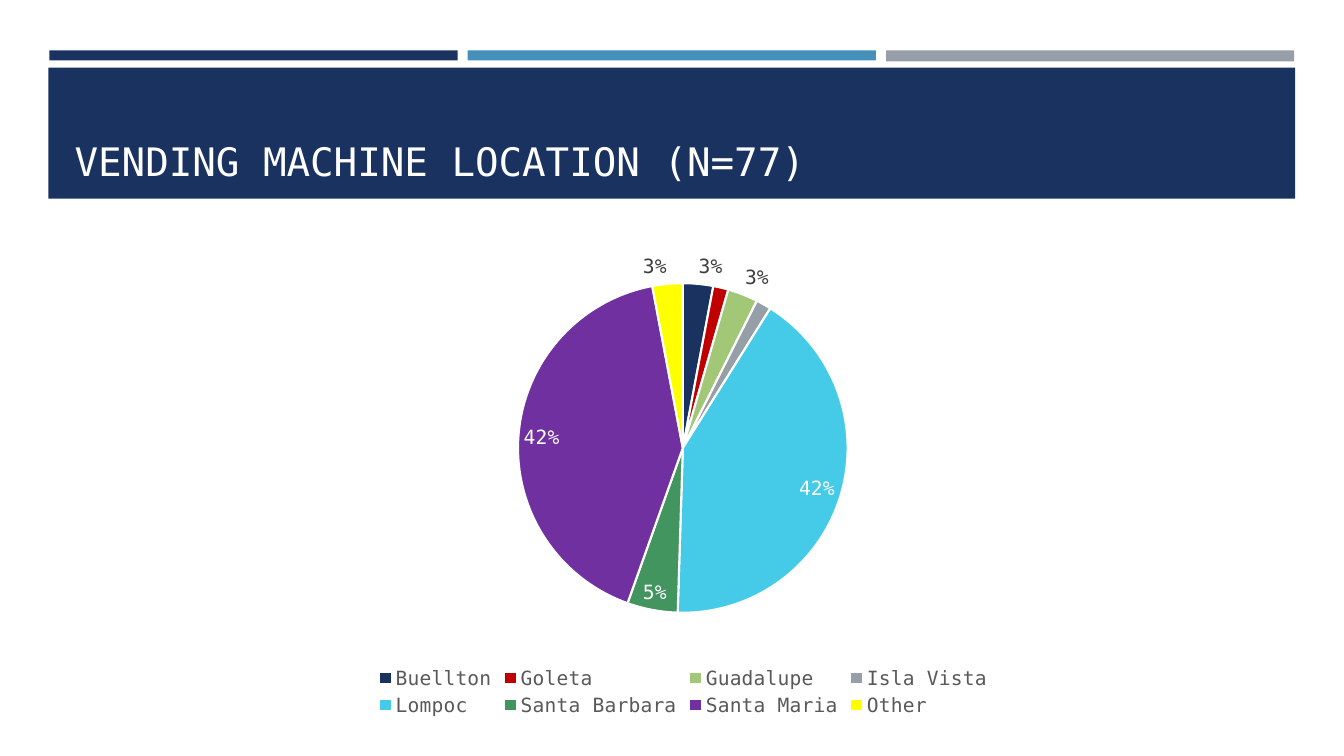
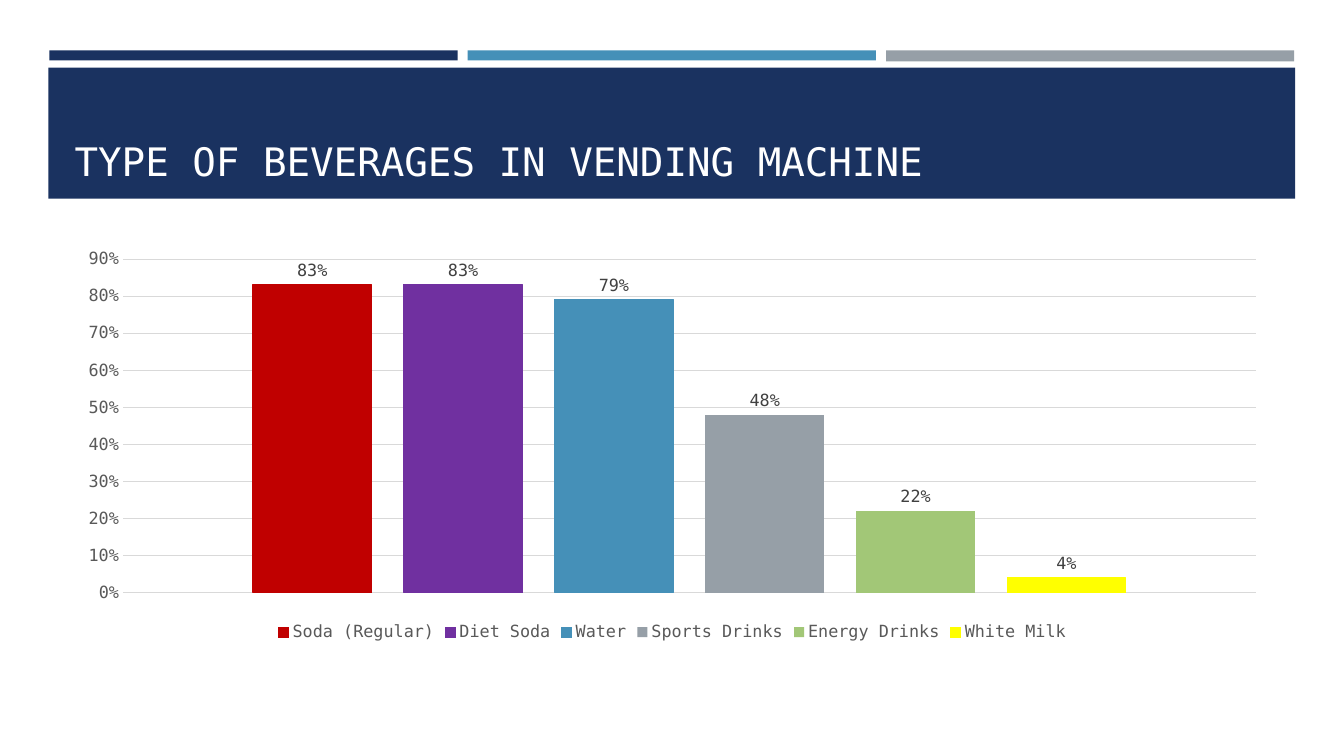
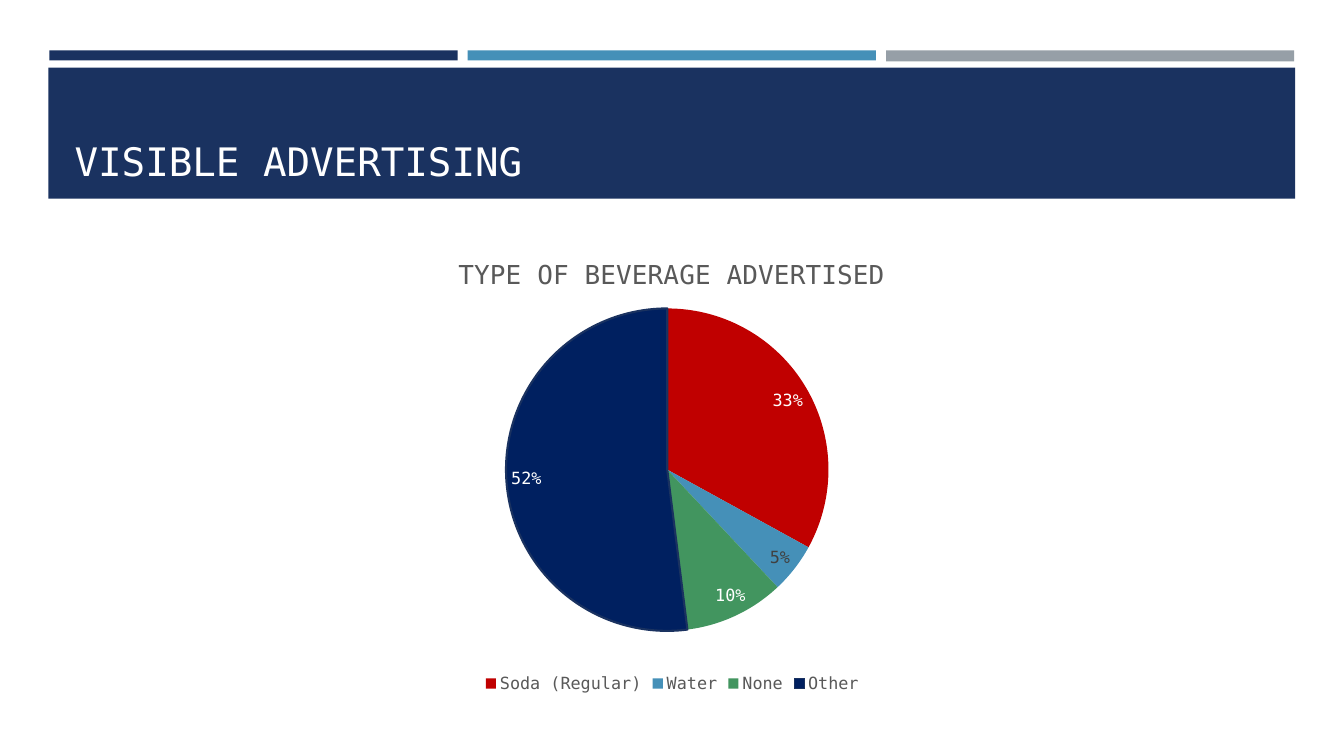
import lxml.etree
import pptx
import pptx.chart.data
import pptx.dml.color
import pptx.enum.chart
import pptx.enum.shapes
import pptx.enum.text
import pptx.oxml.ns
import pptx.util

Inches = pptx.util.Inches
Pt = pptx.util.Pt
qn = pptx.oxml.ns.qn
ChartType = pptx.enum.chart.XL_CHART_TYPE
LabelPos = pptx.enum.chart.XL_LABEL_POSITION

FONT = "DejaVu Sans Mono"
NAVY, BLUE, GREY = "1A3260", "4590B8", "969FA7"
RED, PURPLE, YELLOW = "C00000", "7030A0", "FFFF00"
LIME, GREEN, CYAN, MIDNIGHT = "A2C777", "42955F", "45CBE8", "002060"
WHITE, TEXT, LABEL, DARK, GRID = "FFFFFF", "595959", "404040", "3D3D3D", "D9D9D9"

LOCATIONS = [
    ("Buellton", 3, NAVY, DARK),
    ("Goleta", 1.5, RED, None),
    ("Guadalupe", 3, LIME, DARK),
    ("Isla Vista", 1.5, GREY, None),
    ("Lompoc", 42, CYAN, WHITE),
    ("Santa Barbara", 5, GREEN, WHITE),
    ("Santa Maria", 42, PURPLE, WHITE),
    ("Other", 3, YELLOW, DARK),
]
BEVERAGES = [
    ("Soda (Regular)", 0.83, RED, True),
    ("Diet Soda", 0.83, PURPLE, True),
    ("Water", 0.79, BLUE, True),
    ("Sports Drinks", 0.48, GREY, False),
    ("Energy Drinks", 0.22, LIME, False),
    ("White Milk", 0.04, YELLOW, True),
]
ADVERTISED = [
    ("Soda (Regular)", 33, RED, WHITE),
    ("Water", 5, BLUE, LABEL),
    ("None", 10, GREEN, WHITE),
    ("Other", 52, MIDNIGHT, WHITE),
]


def rgb(color):
    """Turn a hex string into a colour."""
    return pptx.dml.color.RGBColor.from_string(color)


def set_font(font, size, color):
    """Apply the deck's typeface with a size and colour."""
    font.name = FONT
    font.size = Pt(size)
    font.bold = False
    font.color.rgb = rgb(color)


def set_fill(fmt, color):
    """Fill a shape or chart part with one colour."""
    fmt.fill.solid()
    fmt.fill.fore_color.rgb = rgb(color)


def set_line(line, color, width):
    """Give a line its colour and width."""
    line.color.rgb = rgb(color)
    line.width = Pt(width)


def style_layout(layout, slide):
    """Put the bands and title position on the layout, drawing them through a slide."""
    bands = [(0.48, 0.67, 12.37, 1.3, NAVY)]
    bands += [(0.49 + 4.15 * i, 0.5, 4.05, height, color)
              for i, (height, color) in enumerate(
                  ((0.1, NAVY), (0.1, BLUE), (0.11, GREY)))]
    for *box, color in bands:
        sp = slide.shapes.add_shape(
            pptx.enum.shapes.MSO_SHAPE.RECTANGLE, *map(Inches, box))
        sp.shadow.inherit = False
        set_fill(sp, color)
        sp.line.fill.background()
        layout.shapes.element.insert(2, sp.element)
    title = layout.placeholders[0]
    title.left, title.top, title.width, title.height = map(
        Inches, (0.64, 0.77, 12.06, 1.11))
    title.text_frame.vertical_anchor = pptx.enum.text.MSO_ANCHOR.BOTTOM
    title.text_frame.auto_size = pptx.enum.text.MSO_AUTO_SIZE.NONE


def add_title(slide, text):
    """Write the slide title."""
    tf = slide.shapes.title.text_frame
    tf.text = text
    p = tf.paragraphs[0]
    p.alignment = pptx.enum.text.PP_ALIGN.LEFT
    set_font(p.font, 28, WHITE)


def place(parent, index, box, frame, inner=False):
    """Position a chart part, given slide inches, within the chart frame."""
    for old in parent.findall(qn("c:layout")):
        parent.remove(old)
    layout = lxml.etree.Element(qn("c:layout"))
    manual = lxml.etree.SubElement(layout, qn("c:manualLayout"))
    left, top, width, height = frame
    shares = [(box[0] - left) / width, (box[1] - top) / height]
    shares += [side / whole for side, whole in zip(box[2:], (width, height))]
    values = [("layoutTarget", "inner")] if inner else []
    values += [("xMode", "edge"), ("yMode", "edge")]
    values += [(tag, f"{share:.4f}") for tag, share in zip("xywh", shares)]
    for tag, value in values:
        lxml.etree.SubElement(manual, qn("c:" + tag)).set("val", value)
    parent.insert(index, layout)


def add_chart(slide, kind, data, frame, plot, size):
    """Add a chart with a legend below and a fixed plot area."""
    chart = slide.shapes.add_chart(kind, *map(Inches, frame), data).chart
    set_font(chart.font, size, TEXT)
    chart.has_title = False
    chart.has_legend = True
    chart.legend.position = pptx.enum.chart.XL_LEGEND_POSITION.BOTTOM
    chart.legend.include_in_layout = False
    set_font(chart.legend.font, size, TEXT)
    place(chart.element.xpath(".//c:plotArea")[0], 0, plot, frame, inner=True)
    return chart


def add_pie(slide, wedges, frame, plot, size):
    """Add a pie chart of (name, value, colour, label colour) wedges."""
    names, values, colors, label_colors = zip(*wedges)
    data = pptx.chart.data.CategoryChartData()
    data.categories = names
    data.add_series("Series 1", values)
    chart = add_chart(slide, ChartType.PIE, data, frame, plot, size)
    chart.plots[0].vary_by_categories = True
    series = chart.plots[0].series[0]
    labels = series.data_labels
    labels.show_value = False
    labels.show_percentage = True
    labels.number_format = "0%"
    labels.number_format_is_linked = False
    labels.position = LabelPos.BEST_FIT
    set_font(labels.font, size, LABEL)
    for i, (color, label_color) in enumerate(zip(colors, label_colors)):
        set_fill(series.points[i].format, color)
        label = series.points[i].data_label
        set_font(label.font, size, label_color or LABEL)
        label.position = LabelPos.BEST_FIT
    for dlbl, label_color in zip(chart.element.xpath(".//c:dLbl"), label_colors):
        if label_color:
            dlbl.find(qn("c:showVal")).set("val", "0")
            dlbl.find(qn("c:showPercent")).set("val", "1")
        else:
            for child in list(dlbl)[1:]:
                dlbl.remove(child)
            lxml.etree.SubElement(dlbl, qn("c:delete")).set("val", "1")
    return chart


def add_columns(slide, bars, frame, plot, size):
    """Add a column chart with one series per (name, value, colour, outlined) bar."""
    data = pptx.chart.data.CategoryChartData()
    data.categories = ["1"]
    for name, value, *_ in bars:
        data.add_series(name, [value])
    chart = add_chart(slide, ChartType.COLUMN_CLUSTERED, data, frame, plot, size)
    chart.plots[0].gap_width = 219
    chart.plots[0].overlap = -27
    chart.plots[0].vary_by_categories = False
    for series, (_, _, color, outlined) in zip(chart.plots[0].series, bars):
        series.invert_if_negative = False
        set_fill(series.format, color)
        if outlined:
            set_line(series.format.line, color, 0.75)
        labels = series.data_labels
        labels.show_value = True
        labels.position = LabelPos.OUTSIDE_END
        labels.number_format = "0%"
        labels.number_format_is_linked = False
        set_font(labels.font, size, LABEL)
    chart.category_axis.visible = False
    axis = chart.value_axis
    axis.minimum_scale, axis.maximum_scale, axis.major_unit = 0, 0.9, 0.1
    axis.major_tick_mark = pptx.enum.chart.XL_TICK_MARK.NONE
    axis.tick_labels.number_format = "0%"
    axis.tick_labels.number_format_is_linked = False
    set_font(axis.tick_labels.font, size, TEXT)
    axis.format.line.fill.background()
    set_line(axis.major_gridlines.format.line, GRID, 0.75)


def add_chart_title(chart, text, corner, frame):
    """Write the chart's own title at a corner given in slide inches."""
    chart.has_title = True
    tf = chart.chart_title.text_frame
    tf.text = text
    set_font(tf.paragraphs[0].font, 18.6, TEXT)
    chart.chart_title.include_in_layout = False
    place(chart.element.xpath(".//c:title")[0], 1, corner, frame)


def main():
    """Build and save the deck."""
    prs = pptx.Presentation()
    prs.slide_width, prs.slide_height = Inches(40 / 3), Inches(7.5)
    layout = prs.slide_layouts[5]
    locations, beverages, advertising = (
        prs.slides.add_slide(layout) for _ in range(3))
    style_layout(layout, locations)

    add_title(locations, "VENDING MACHINE LOCATION (N=77)")
    chart = add_pie(locations, LOCATIONS, (0.64, 2.39, 12.28, 4.76),
                    (5.14, 2.81, 3.27, 3.27), 14)
    for i in range(len(LOCATIONS)):
        set_line(chart.plots[0].series[0].points[i].format.line, WHITE, 1.5)

    add_title(beverages, "TYPE OF BEVERAGES IN VENDING MACHINE")
    add_columns(beverages, BEVERAGES, (0.64, 2.39, 12.06, 4.02),
                (1.22, 2.57, 11.24, 3.31), 12)

    add_title(advertising, "VISIBLE ADVERTISING")
    frame = (0.64, 2.39, 12.06, 4.53)
    chart = add_pie(advertising, ADVERTISED, frame, (5.02, 3.06, 3.2, 3.2), 12)
    set_line(chart.plots[0].series[0].points[3].format.line, NAVY, 1.5)
    add_chart_title(chart, "TYPE OF BEVERAGE ADVERTISED", (4.5, 2.5), frame)

    prs.save("out.pptx")


if __name__ == "__main__":
    main()
